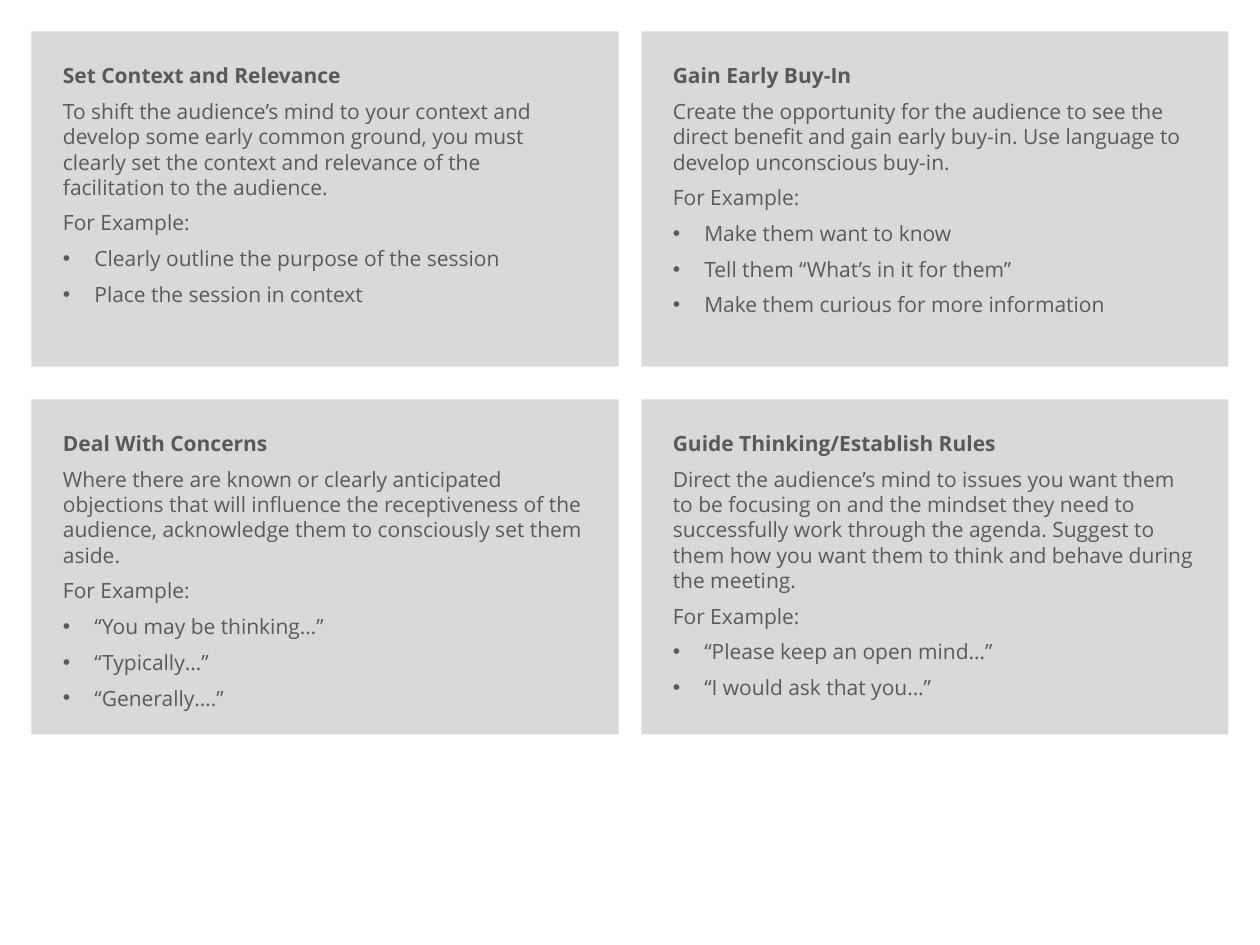
from lxml.etree import SubElement
from pptx import Presentation
from pptx.dml.color import RGBColor
from pptx.enum.shapes import MSO_SHAPE as Preset
from pptx.enum.text import MSO_ANCHOR as Anchor, PP_ALIGN as Align
from pptx.oxml.ns import qn
from pptx.util import Pt

COLORS = {"panel": "D9D9D9", "text": "595959"}
FONT = "Open Sans"
MARGIN = 18
PANEL_WIDTH, PANEL_HEIGHT = 335.5, 191.5
COLUMN_STEP, ROW_STEP = 348.5, 210.25
TOPICS = [
    ("Set Context and Relevance",
     "To shift the audience’s mind to your context and develop some early common ground, "
     "you must clearly set the context and relevance of the facilitation to the audience.",
     ["Clearly outline the purpose of the session", "Place the session in context"]),
    ("Gain Early Buy-In",
     "Create the opportunity for the audience to see the direct benefit and gain early buy-in. "
     "Use language to develop unconscious buy-in.",
     ["Make them want to know", "Tell them “What’s in it for them”",
      "Make them curious for more information"]),
    ("Deal With Concerns",
     "Where there are known or clearly anticipated objections that will influence the "
     "receptiveness of the audience, acknowledge them to consciously set them aside.",
     ["“You may be thinking…”", "“Typically…”", "“Generally….”"]),
    ("Guide Thinking/Establish Rules",
     "Direct the audience’s mind to issues you want them to be focusing on and the mindset "
     "they need to successfully work through the agenda. Suggest to them how you want them "
     "to think and behave during the meeting.",
     ["“Please keep an open mind…”", "“I would ask that you…”"]),
]


def color(name):
    """Return the named colour."""
    return RGBColor.from_string(COLORS[name])


def add_bullet(paragraph):
    """Give a paragraph a hanging bullet."""
    properties = paragraph._p.get_or_add_pPr()
    properties.set("marL", str(Pt(18)))
    properties.set("indent", str(-Pt(18)))
    SubElement(properties, qn("a:buFont")).set("typeface", "Arial")
    SubElement(properties, qn("a:buChar")).set("char", "•")


def write_line(paragraph, wording, bold=False, bullet=False, space_before=6):
    """Write one paragraph of a panel."""
    paragraph.text = wording
    if bullet:
        add_bullet(paragraph)
    paragraph.alignment = Align.LEFT
    paragraph.space_before = Pt(space_before)
    font = paragraph.font
    font.name, font.size, font.bold = FONT, Pt(12), bold
    font.color.rgb = color("text")


def add_panel(slide, left, top, heading, advice, examples):
    """Add one grey panel with its heading, advice and examples."""
    panel = slide.shapes.add_shape(
        Preset.RECTANGLE, Pt(left), Pt(top), Pt(PANEL_WIDTH), Pt(PANEL_HEIGHT))
    panel.shadow.inherit = False
    panel.fill.solid()
    panel.fill.fore_color.rgb = color("panel")
    panel.line.fill.background()
    frame = panel.text_frame
    frame.word_wrap = True
    frame.vertical_anchor = Anchor.TOP
    frame.margin_left = frame.margin_right = Pt(18)
    frame.margin_top = frame.margin_bottom = Pt(18)
    write_line(frame.paragraphs[0], heading, bold=True, space_before=0)
    for wording in (advice, "For Example:"):
        write_line(frame.add_paragraph(), wording)
    for example in examples:
        write_line(frame.add_paragraph(), example, bullet=True)


def main():
    """Build the slide of four facilitation topics."""
    deck = Presentation()
    deck.slide_width, deck.slide_height = Pt(720), Pt(540)
    slide = deck.slides.add_slide(deck.slide_layouts[6])
    for index, topic in enumerate(TOPICS):
        row, column = divmod(index, 2)
        add_panel(slide, MARGIN + column * COLUMN_STEP, MARGIN + row * ROW_STEP, *topic)
    deck.save("out.pptx")


if __name__ == "__main__":
    main()
